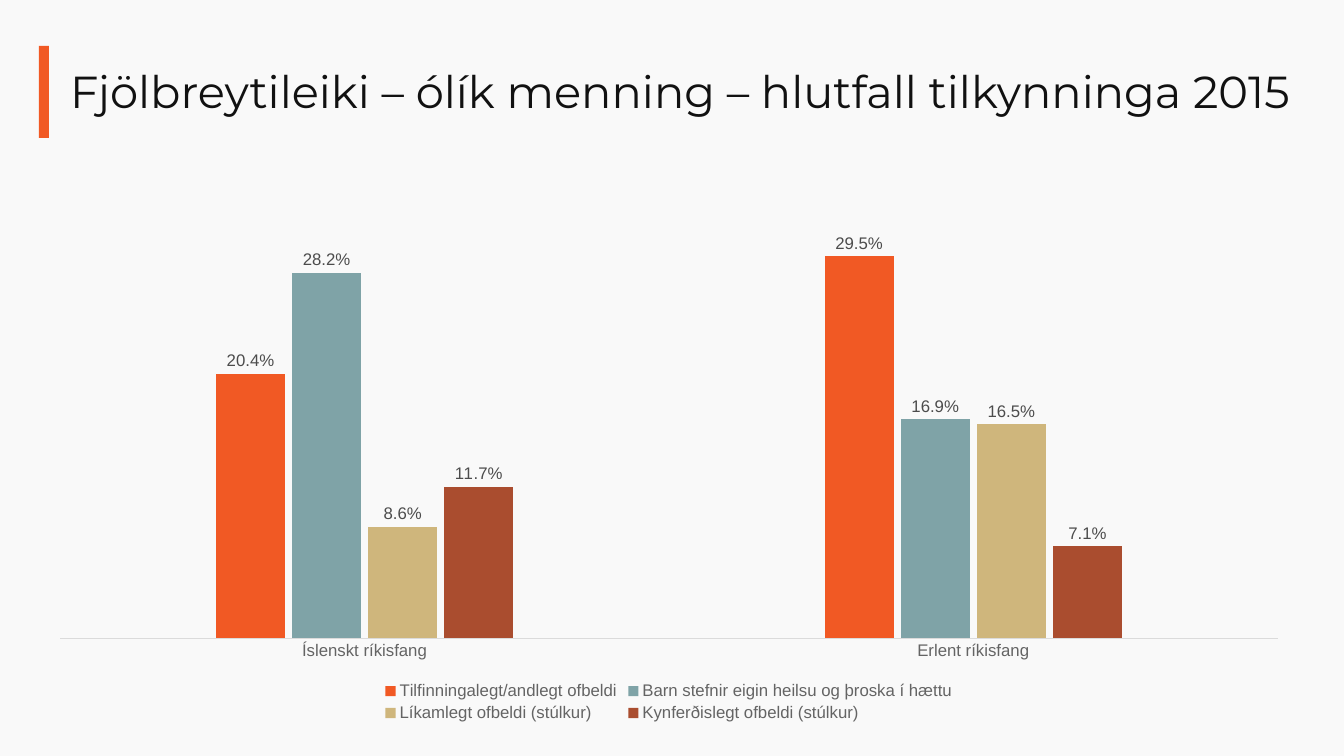
"""Build a slide comparing shares of child-protection reports by citizenship in 2015."""
import pptx
import pptx.chart.data
import pptx.dml.color
import pptx.enum.chart
import pptx.enum.shapes
import pptx.enum.text
import pptx.util

RGBColor = pptx.dml.color.RGBColor
ORANGE = RGBColor(0xF1, 0x59, 0x24)
TEAL = RGBColor(0x7F, 0xA3, 0xA7)
SAND = RGBColor(0xCF, 0xB6, 0x7C)
RUST = RGBColor(0xAA, 0x4D, 0x2F)
INK = RGBColor(0x11, 0x11, 0x11)
LABEL_GREY = RGBColor(0x4C, 0x4C, 0x4C)
AXIS_GREY = RGBColor(0x64, 0x64, 0x64)
LINE_GREY = RGBColor(0xDB, 0xDB, 0xDB)
BACKGROUND = RGBColor(0xF9, 0xF9, 0xF9)

TITLE = "Fjölbreytileiki – ólík menning – hlutfall tilkynninga 2015"
CATEGORIES = ["Íslenskt ríkisfang", "Erlent ríkisfang"]
SERIES = [
    ("Tilfinningalegt/andlegt ofbeldi", (0.204, 0.295), ORANGE),
    ("Barn stefnir eigin heilsu og þroska í hættu", (0.282, 0.169), TEAL),
    ("Líkamlegt ofbeldi (stúlkur)", (0.086, 0.165), SAND),
    ("Kynferðislegt ofbeldi (stúlkur)", (0.117, 0.071), RUST),
]

PX = 914400 / 100.8
SLIDE_SIZE = (1344, 756)
ACCENT_BOX = (39, 46, 10, 92)
TITLE_BOX = (60, 40, 1244, 107)
CHART_BOX = (35, 174, 1268, 552)


def emu(lengths):
    """Turn px lengths into EMU."""
    return [pptx.util.Emu(round(length * PX)) for length in lengths]


def apply(target, values):
    """Set attributes of an object from a dict."""
    for name, value in values.items():
        setattr(target, name, value)


def set_font(font, name, size, color):
    """Set the typeface, size and colour of a font."""
    apply(font, {"name": name, "size": pptx.util.Pt(size)})
    font.color.rgb = color


def add_accent(slide):
    """Draw the bar beside the title."""
    shape = slide.shapes.add_shape(pptx.enum.shapes.MSO_SHAPE.RECTANGLE, *emu(ACCENT_BOX))
    shape.shadow.inherit = False
    shape.fill.solid()
    shape.fill.fore_color.rgb = ORANGE
    shape.line.fill.background()


def add_title(slide):
    """Place and format the title."""
    title = slide.shapes.title
    apply(title, dict(zip(("left", "top", "width", "height"), emu(TITLE_BOX))))
    apply(title.text_frame, {
        "text": TITLE,
        "word_wrap": True,
        "auto_size": pptx.enum.text.MSO_AUTO_SIZE.NONE,
        "vertical_anchor": pptx.enum.text.MSO_ANCHOR.MIDDLE,
    })
    paragraph = title.text_frame.paragraphs[0]
    apply(paragraph, {"alignment": pptx.enum.text.PP_ALIGN.LEFT, "line_spacing": 0.9})
    set_font(paragraph.runs[0].font, "Montserrat", 32, INK)


def add_chart(slide):
    """Add the clustered columns with labels and legend."""
    data = pptx.chart.data.CategoryChartData(number_format="0.0%")
    data.categories = CATEGORIES
    for name, values, _ in SERIES:
        data.add_series(name, values)
    kind = pptx.enum.chart.XL_CHART_TYPE.COLUMN_CLUSTERED
    chart = slide.shapes.add_chart(kind, *emu(CHART_BOX), data).chart
    apply(chart, {"has_title": False, "has_legend": True})
    set_font(chart.font, "Arial", 10, INK)

    apply(chart.legend, {
        "position": pptx.enum.chart.XL_LEGEND_POSITION.BOTTOM,
        "include_in_layout": False,
    })
    set_font(chart.legend.font, "Arial", 12, AXIS_GREY)

    apply(chart.value_axis, {
        "visible": False,
        "has_major_gridlines": False,
        "minimum_scale": 0,
        "maximum_scale": 0.35,
    })
    no_tick = pptx.enum.chart.XL_TICK_MARK.NONE
    axis = chart.category_axis
    apply(axis, {"major_tick_mark": no_tick, "minor_tick_mark": no_tick})
    axis.format.line.color.rgb = LINE_GREY
    axis.format.line.width = pptx.util.Pt(0.75)
    set_font(axis.tick_labels.font, "Arial", 12, AXIS_GREY)

    plot = chart.plots[0]
    apply(plot, {"gap_width": 450, "overlap": -10, "vary_by_categories": False})
    for series, (_, _, color) in zip(plot.series, SERIES):
        series.format.fill.solid()
        series.format.fill.fore_color.rgb = color
        apply(series.data_labels, {
            "show_value": True,
            "number_format": "0.0%",
            "number_format_is_linked": False,
            "position": pptx.enum.chart.XL_LABEL_POSITION.OUTSIDE_END,
        })
        set_font(series.data_labels.font, "Arial", 12, LABEL_GREY)


def main():
    """Build and save the presentation."""
    presentation = pptx.Presentation()
    apply(presentation, dict(zip(("slide_width", "slide_height"), emu(SLIDE_SIZE))))
    slide = presentation.slides.add_slide(presentation.slide_layouts[5])
    slide.background.fill.solid()
    slide.background.fill.fore_color.rgb = BACKGROUND
    add_accent(slide)
    add_title(slide)
    add_chart(slide)
    presentation.save("out.pptx")


if __name__ == "__main__":
    main()
